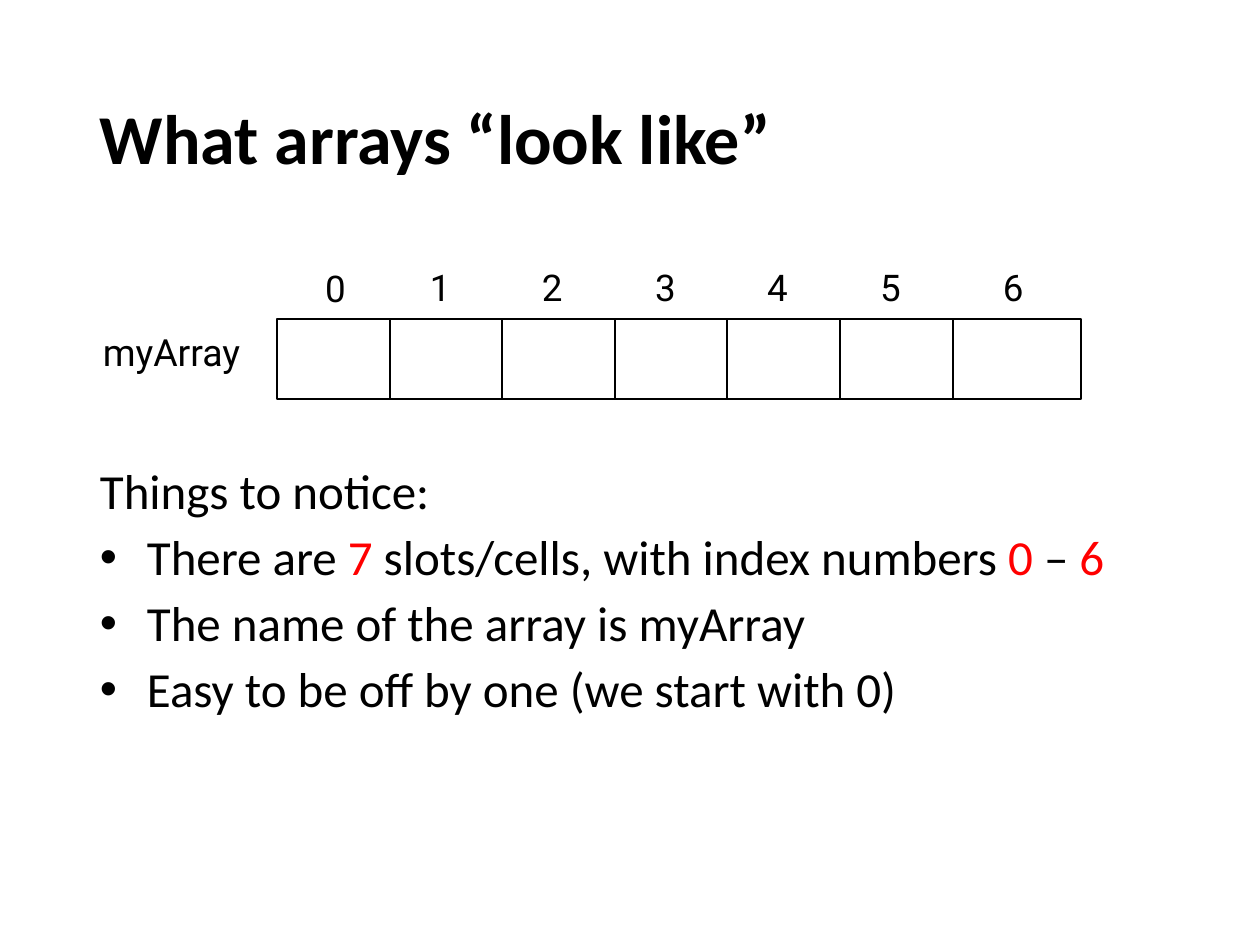
"""Build a slide that shows an array as a row of numbered cells."""
from dataclasses import dataclass

from lxml.etree import SubElement
from pptx import Presentation
from pptx.dml.color import RGBColor
from pptx.enum.shapes import MSO_CONNECTOR, MSO_SHAPE
from pptx.enum.text import MSO_ANCHOR
from pptx.oxml.ns import qn
from pptx.util import Emu, Pt


@dataclass(frozen=True)
class Theme:
    ink: RGBColor = RGBColor(0, 0, 0)
    accent: RGBColor = RGBColor(255, 0, 0)
    text_font: str = "Calibri"
    label_font: str = "Roboto"
    title_size: float = 40
    body_size: float = 28
    index_size: float = 21
    name_size: float = 21.4
    line_width: float = 0.75


THEME = Theme()


def px(length):
    return Emu(round(length * 914400 / 126))


def add_text(shapes, paragraphs, left, top, width, height, *, size, font=THEME.text_font,
             bold=False, wrap=True, anchor=MSO_ANCHOR.TOP, insets=(13, 6),
             line_spacing=None, space_before=0, bulleted_from=None):
    text_box = shapes.add_textbox(px(left), px(top), px(width), px(height))
    frame = text_box.text_frame
    frame.word_wrap = wrap
    frame.vertical_anchor = anchor
    frame.margin_left = frame.margin_right = px(insets[0])
    frame.margin_top = frame.margin_bottom = px(insets[1])
    for number, runs in enumerate(paragraphs):
        paragraph = frame.add_paragraph() if number else frame.paragraphs[0]
        if bulleted_from is not None and number >= bulleted_from:
            properties = paragraph._p.get_or_add_pPr()
            properties.set("marL", str(px(47)))
            properties.set("indent", str(-px(47)))
            SubElement(properties, qn("a:buFont"), typeface="Arial")
            SubElement(properties, qn("a:buChar"), char="•")
        if line_spacing:
            paragraph.line_spacing = line_spacing
        if number:
            paragraph.space_before = Pt(space_before)
        for text, color in runs:
            run = paragraph.add_run()
            run.text = text
            run.font.name = font
            run.font.size = Pt(size)
            run.font.bold = bold
            run.font.color.rgb = color


presentation = Presentation()
presentation.slide_width = px(1260)
presentation.slide_height = px(945)
slide = presentation.slides.add_slide(presentation.slide_layouts[6])

add_text(slide.shapes, [[("What arrays “look like”", THEME.ink)]], 87, 50, 1086, 183,
         size=THEME.title_size, bold=True, anchor=MSO_ANCHOR.MIDDLE, line_spacing=0.9)

notes = [
    [("Things to notice:", THEME.ink)],
    [("There are ", THEME.ink), ("7", THEME.accent),
     (" slots/cells, with index numbers ", THEME.ink), ("0", THEME.accent),
     (" – ", THEME.ink), ("6", THEME.accent)],
    [("The name of the array is myArray", THEME.ink)],
    [("Easy to be off by one (we start with 0)", THEME.ink)],
]
add_text(slide.shapes, notes, 87, 461, 1086, 372, size=THEME.body_size,
         line_spacing=0.9, space_before=7.5, bulleted_from=1)

array_shapes = slide.shapes.add_group_shape().shapes
array_left, array_top, array_width, array_height = 277, 319, 804, 80
cell_pitch = 112.6
frame_shape = array_shapes.add_shape(MSO_SHAPE.RECTANGLE, px(array_left), px(array_top),
                                     px(array_width), px(array_height))
frame_shape.shadow.inherit = False
frame_shape.fill.background()
frame_shape.line.color.rgb = THEME.ink
frame_shape.line.width = Pt(THEME.line_width)

for cell in range(1, 7):
    x = px(round(array_left + cell * cell_pitch))
    divider = array_shapes.add_connector(MSO_CONNECTOR.STRAIGHT, x, px(array_top),
                                         x, px(array_top + array_height))
    divider.line.color.rgb = THEME.ink
    divider.line.width = Pt(THEME.line_width)
    SubElement(divider._element.spPr, qn("a:effectLst"))

index_lefts = [306, 411, 523, 636, 748, 861, 984]
for index, left in enumerate(index_lefts):
    top = 255 if index else 256
    add_text(array_shapes, [[(str(index), THEME.ink)]], left, top, 59, 66,
             size=THEME.index_size, font=THEME.label_font, wrap=False, insets=(19, 10))

add_text(array_shapes, [[("myArray", THEME.ink)]], 84, 319, 176, 64,
         size=THEME.name_size, font=THEME.label_font, wrap=False, insets=(19, 10))

presentation.save("out.pptx")
